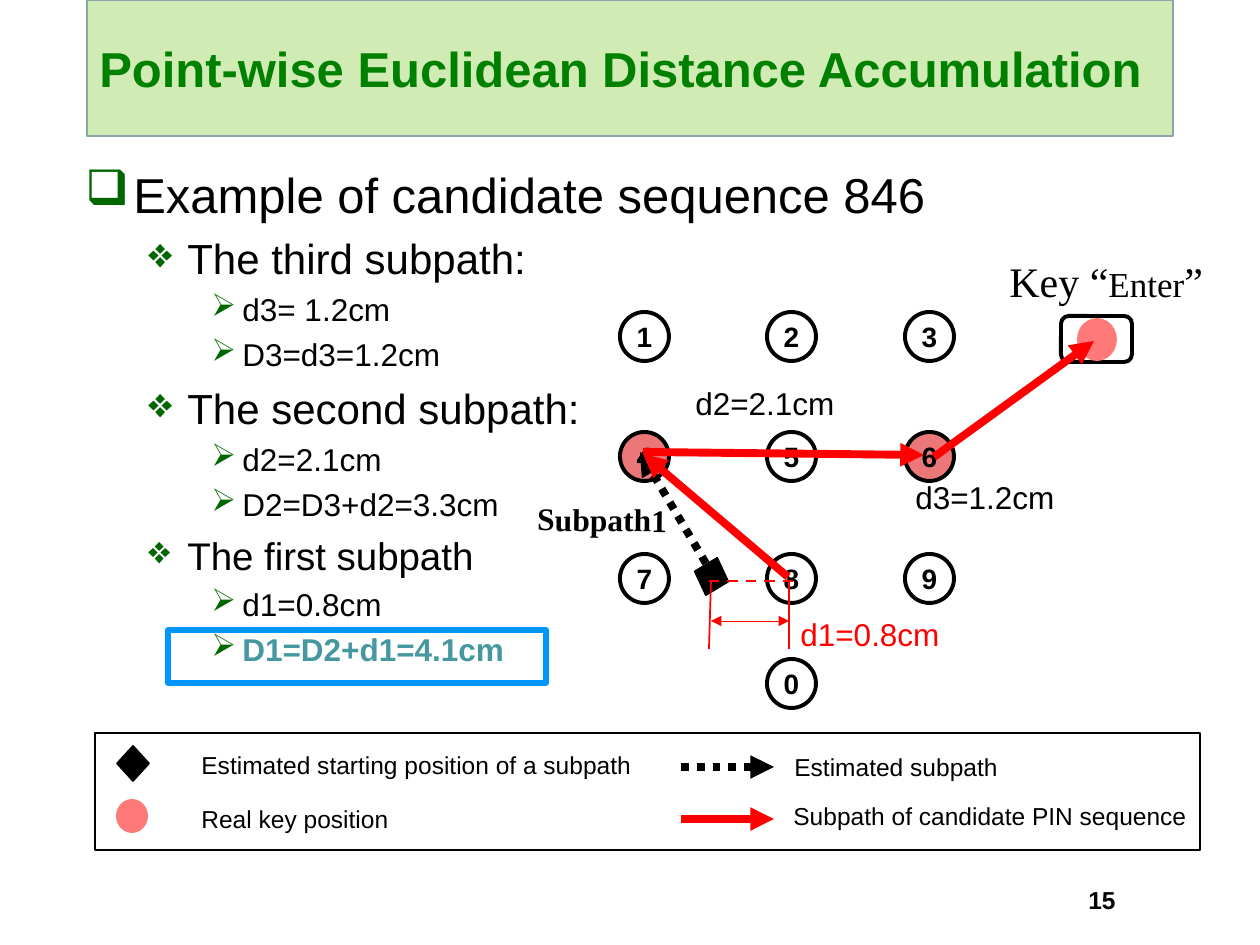
"""Builds the slide on point-wise Euclidean distance accumulation."""
from itertools import product

from lxml.etree import SubElement
from pptx import Presentation
from pptx.dml.color import RGBColor
from pptx.enum.dml import MSO_LINE_DASH_STYLE as Dash
from pptx.enum.shapes import MSO_CONNECTOR, MSO_SHAPE as Shape
from pptx.enum.text import MSO_ANCHOR as Anchor, PP_ALIGN as Align
from pptx.oxml.ns import qn
from pptx.util import Emu, Pt

COLORS = {
    "black": "000000", "red": "FF0000", "green": "008000", "bullet": "006600",
    "banner": "D0EBB3", "banner_edge": "8AA6A8", "teal": "4597A0",
    "real_key": "FF7979", "pressed": "EB7778", "highlight": "0096FF",
}


def px(value):
    return Emu(round(value * 914400 / 126))


def rgb(name):
    return RGBColor.from_string(COLORS[name])


def write(paragraph, text, *, size, color="black", bold=False, font="Arial", align=None):
    run = paragraph.add_run()
    run.text = text
    run.font.name, run.font.size, run.font.bold = font, Pt(size), bold
    run.font.color.rgb = rgb(color)
    if align is not None:
        paragraph.alignment = align


class Board:
    """Holds the drawing style and the current slide."""

    levels = [("❑", 48, 48), ("❖", 102, 39), ("➢", 157, 31)]

    def __init__(self, slide):
        self.shapes = slide.shapes

    def shape(self, kind, left, top, width, height, fill=None, line=None, weight=1, turn=0):
        item = self.shapes.add_shape(kind, px(left), px(top), px(width), px(height))
        item.shadow.inherit = False
        item.rotation = turn
        if fill:
            item.fill.solid()
            item.fill.fore_color.rgb = rgb(fill)
        else:
            item.fill.background()
        if line:
            item.line.color.rgb = rgb(line)
            item.line.width = Pt(weight)
        else:
            item.line.fill.background()
        return item

    def banner(self, text, left, top, width, height):
        item = self.shape(Shape.RECTANGLE, left, top, width, height, "banner", "banner_edge")
        item.text_frame.vertical_anchor = Anchor.MIDDLE
        write(item.text_frame.paragraphs[0], text, size=28, color="green", bold=True,
              align=Align.LEFT)

    def key(self, digit, left, top, fill=None):
        item = self.shape(Shape.OVAL, left, top, 49, 49, fill, "black", 2.25)
        frame = item.text_frame
        frame.margin_left = frame.margin_right = 0
        frame.vertical_anchor = Anchor.MIDDLE
        write(frame.paragraphs[0], digit, size=16, bold=True, align=Align.CENTER)

    def label(self, runs, left, top, width, height=50, wrap=True, turn=0, **style):
        box = self.shapes.add_textbox(px(left), px(top), px(width), px(height))
        box.rotation = turn
        box.text_frame.word_wrap = wrap
        for text, size in runs:
            write(box.text_frame.paragraphs[0], text, size=size, **style)

    def outline(self, entries, left, top, width, height):
        box = self.shapes.add_textbox(px(left), px(top), px(width), px(height))
        box.text_frame.word_wrap = True
        for index, (level, text, size, style) in enumerate(entries):
            frame = box.text_frame
            paragraph = frame.add_paragraph() if index else frame.paragraphs[0]
            paragraph.level = level
            char, margin, hang = self.levels[level]
            props = paragraph._p.get_or_add_pPr()
            props.set("marL", str(px(margin)))
            props.set("indent", str(-px(hang)))
            tint = SubElement(props, qn("a:buClr"))
            SubElement(tint, qn("a:srgbClr"), val=COLORS["bullet"])
            SubElement(props, qn("a:buChar"), char=char)
            if index:
                paragraph.space_before = Pt(round(size * 0.23, 1))
            write(paragraph, text, size=size, **style)

    def line(self, start, end, color="red", weight=1.0, dash=None, ends=()):
        item = self.shapes.add_connector(MSO_CONNECTOR.STRAIGHT, *map(px, start + end))
        item.line.color.rgb = rgb(color)
        item.line.width = Pt(weight)
        if dash:
            item.line.dash_style = dash
        for end_tag in ends:
            SubElement(item.line._get_or_add_ln(), qn(end_tag), type="triangle")
        SubElement(item._element.spPr, qn("a:effectLst"))

    def arrow(self, start, tip, color="red", dash=None):
        self.line(start, tip, color, 4.5, dash, ["a:tailEnd"])


def draw_legend(board):
    board.arrow((681, 819), (774, 819))
    board.arrow((681, 767), (774, 767), "black", Dash.ROUND_DOT)
    board.shape(Shape.DIAMOND, 117, 746, 32, 35, "black", "black")
    board.shape(Shape.OVAL, 116, 799, 32, 34, "real_key")
    for text, left, top, width in [
        ("Estimated subpath", 782, 746, 229),
        ("Subpath of candidate PIN sequence", 781, 795, 421),
        ("Estimated starting position of a subpath", 189, 744, 457),
        ("Real key position", 189, 798, 213),
    ]:
        board.label([(text, 14)], left, top, width, 43, wrap=False)
    board.shape(Shape.RECTANGLE, 95, 733, 1105, 117, line="black")


def draw_keypad(board):
    board.shape(Shape.ROUNDED_RECTANGLE, 1061, 316, 71, 46, line="black", weight=2.25)
    board.shape(Shape.OVAL, 1077, 318, 40, 43, "real_key")
    board.label([("Key “", 24), ("Enter", 20), ("”", 24)], 997, 249, 253, 63,
                font="Times New Roman")
    columns, rows = (620, 767, 905), (312, 432, 554)
    for digit, (top, left) in zip("123456789", product(rows, columns)):
        board.key(digit, left, top, "pressed" if digit in "46" else None)
    board.key("0", columns[1], 659)


def draw_subpaths(board):
    board.label([("d3=1.2cm", 18)], 903, 472, 199)
    board.arrow((934, 457), (1094, 341))
    board.arrow((643, 452), (924, 455))
    board.label([("d2=2.1cm", 18)], 683, 378, 199)
    board.shape(Shape.DIAMOND, 694, 557, 35, 39, "black", "black", turn=16.9)
    board.arrow((714, 577), (640, 452), "black", Dash.ROUND_DOT)
    board.label([("Subpath1", 18)], 525, 494, 156, wrap=False, turn=0.6,
                font="Times New Roman", bold=True)
    board.line((709, 581), (794, 581), weight=1.5, dash=Dash.DASH)
    board.line((789, 649), (789, 580))
    board.line((711, 582), (709, 649))
    board.line((789, 621), (711, 621), weight=0.5, ends=["a:headEnd", "a:tailEnd"])
    board.arrow((788, 577), (643, 454))
    board.label([("d1=0.8cm", 18)], 788, 609, 199, color="red")


def main():
    deck = Presentation()
    deck.slide_width, deck.slide_height = px(1260), px(945)
    board = Board(deck.slides.add_slide(deck.slide_layouts[6]))
    board.banner("Point-wise Euclidean Distance Accumulation", 87, 0, 1086, 136)
    board.outline([
        (0, "Example of candidate sequence 846", 28, {}),
        (1, "The third subpath:", 24, {}),
        (2, "d3= 1.2cm", 18, {}),
        (2, "D3=d3=1.2cm", 18, {}),
        (1, "The second subpath:", 24, {}),
        (2, "d2=2.1cm", 18, {}),
        (2, "D2=D3+d2=3.3cm", 18, {}),
        (1, "The first subpath", 22, {}),
        (2, "d1=0.8cm", 18, {}),
        (2, "D1=D2+d1=4.1cm", 18, {"color": "teal", "bold": True}),
    ], 73, 158, 1008, 683)
    board.label([("15", 14)], 955, 879, 294, 47, bold=True, align=Align.CENTER)
    draw_legend(board)
    draw_keypad(board)
    draw_subpaths(board)
    board.shape(Shape.RECTANGLE, 168, 630, 378, 53, line="highlight", weight=3)
    deck.save("out.pptx")


if __name__ == "__main__":
    main()
